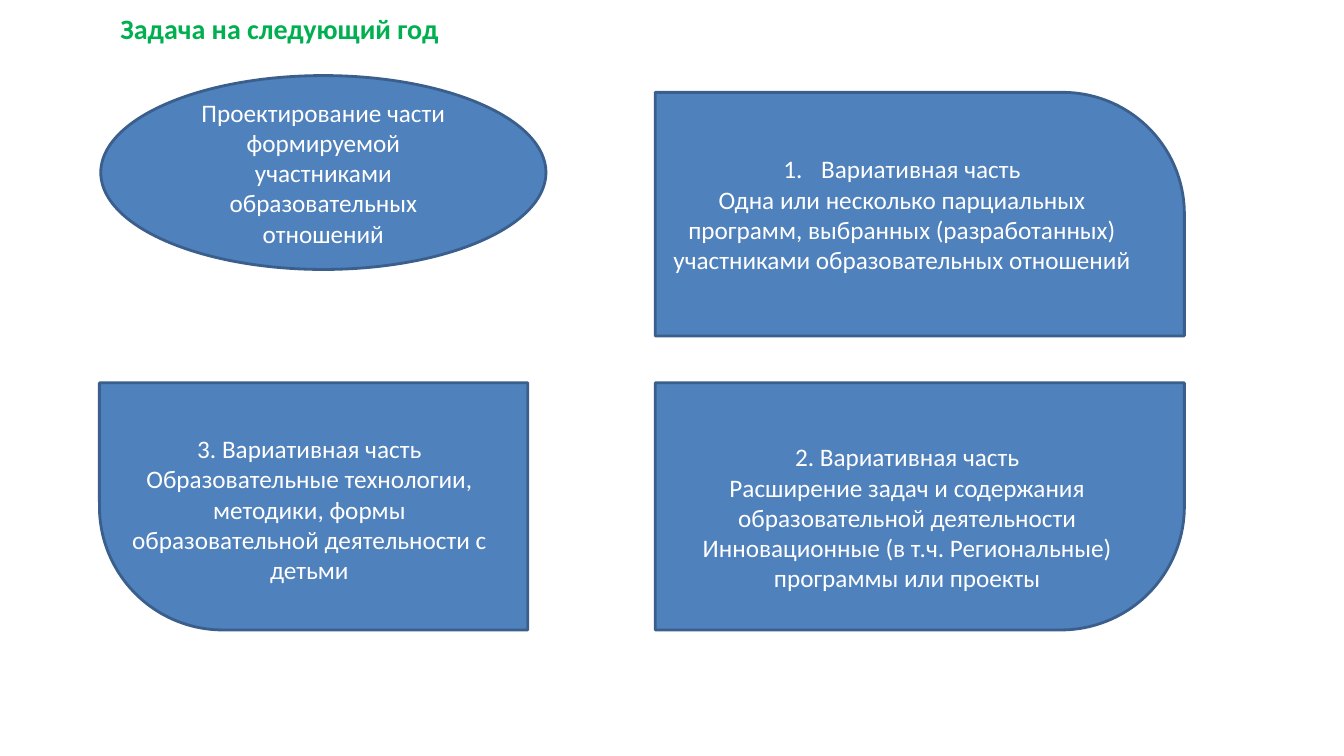
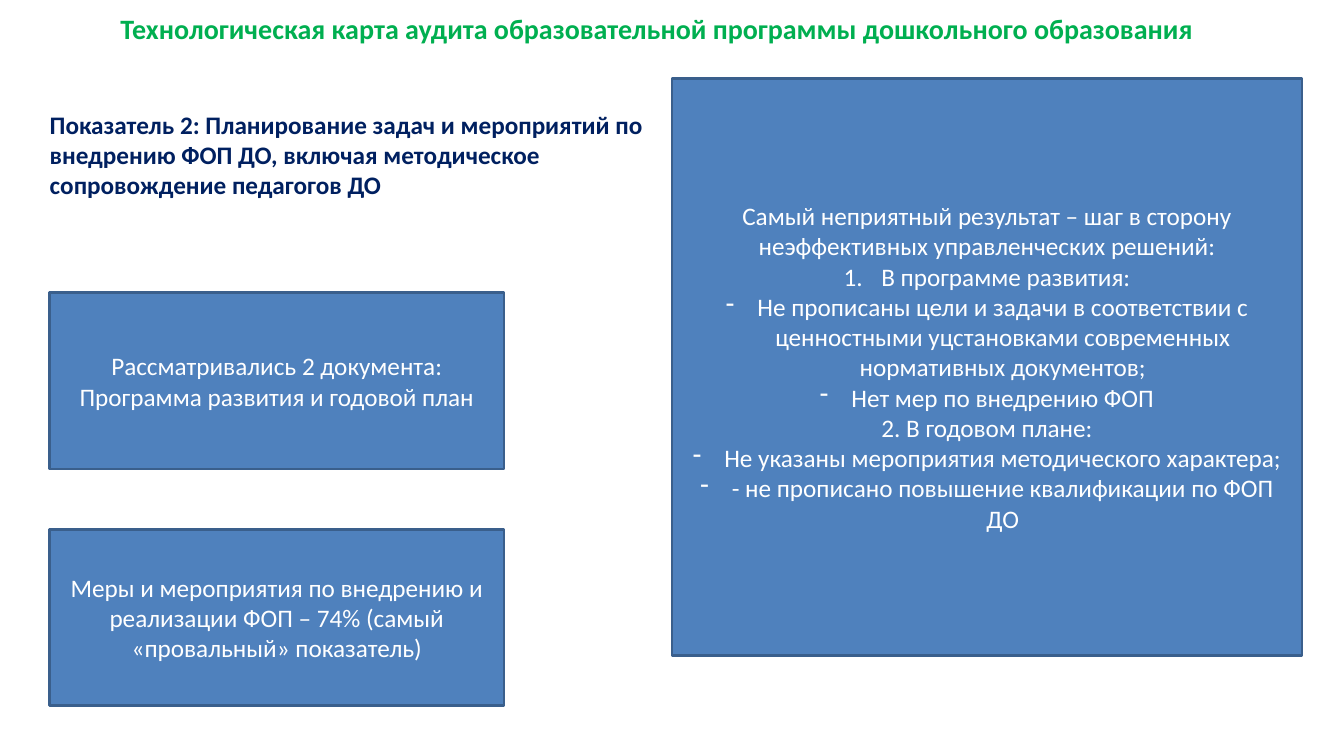
from pptx import Presentation
from pptx.dml.color import RGBColor
from pptx.enum.shapes import MSO_SHAPE as Form
from pptx.enum.text import MSO_ANCHOR as Anchor, MSO_AUTO_SIZE as Fit, PP_ALIGN as Align
from pptx.oxml.ns import qn
from pptx.util import Pt
from lxml.etree import SubElement

GREEN = RGBColor(0x00, 0xAF, 0x50)
NAVY = RGBColor(0x00, 0x20, 0x60)
BLUE = RGBColor(0x4F, 0x81, 0xBD)
EDGE = RGBColor(0x3A, 0x5F, 0x8C)
WHITE = RGBColor(0xFF, 0xFF, 0xFF)
CORNER = Form.ROUND_1_RECTANGLE
MARKS = {
    None: (0, "a:buNone", {}),
    "1.": (27, "a:buAutoNum", {"type": "arabicPeriod"}),
    "-": (22.5, "a:buChar", {"char": "-"}),
}


def write(shape, *lines, size=18, color=WHITE, bold=False,
          align=Align.CENTER, anchor=Anchor.MIDDLE, inset=(7.2, 3.6)):
    frame = shape.text_frame
    frame.word_wrap = True
    frame.auto_size = Fit.NONE
    frame.vertical_anchor = anchor
    frame.margin_left = frame.margin_right = Pt(inset[0])
    frame.margin_top = frame.margin_bottom = Pt(inset[1])
    for i, line in enumerate(lines):
        mark, text = line if isinstance(line, tuple) else (None, line)
        para = frame.add_paragraph() if i else frame.paragraphs[0]
        indent, tag, attrs = MARKS[mark]
        props = para._p.get_or_add_pPr()
        props.set("marL", str(Pt(indent)))
        props.set("indent", str(-Pt(indent)))
        SubElement(props, qn(tag), attrs)
        para.alignment = align
        para.space_before = Pt(0)
        run = para.add_run()
        run.text = text
        font = run.font
        font.name, font.size, font.bold = "Calibri", Pt(size), bold
        font.color.rgb = color


def draw(slide, form, box, *flips):
    shape = slide.shapes.add_shape(form, *map(Pt, box))
    shape.shadow.inherit = False
    shape.fill.solid()
    shape.fill.fore_color.rgb = BLUE
    shape.line.color.rgb = EDGE
    shape.line.width = Pt(2)
    if form == CORNER:
        shape.adjustments[0] = 0.5
    for flip in flips:
        shape.element.spPr.get_or_add_xfrm().set(flip, "1")
    return shape


deck = Presentation()
deck.slide_width, deck.slide_height = Pt(960), Pt(540)
plain = dict(align=Align.LEFT, anchor=Anchor.TOP, inset=(0, 0), bold=True)
slides = []
for layout, text in [
    (5, "Задача на следующий год"),
    (1, "Технологическая карта аудита образовательной программы дошкольного образования"),
]:
    slide = deck.slides.add_slide(deck.slide_layouts[layout])
    title = slide.shapes.title
    title.left, title.top, title.width, title.height = map(Pt, (86, 8, 789, 24.5))
    write(title, text, size=20, color=GREEN, **plain)
    slides.append(slide)
task, audit = slides

goal = draw(task, Form.OVAL, (72, 54, 318, 138.5))
write(goal, "Проектирование части формируемой участниками образовательных отношений")

first = draw(task, CORNER, (468, 66, 378, 174))
write(first, ("1.", "Вариативная часть"),
      "Одна или несколько парциальных программ, выбранных (разработанных) участниками образовательных отношений")

for box, flips, area, lines in [
    ((468, 273.5, 378, 176.5), ["flipV"], (468, 312, 360, 116.5), [
        "2. Вариативная часть",
        "Расширение задач и содержания образовательной деятельности",
        "Инновационные (в т.ч. Региональные) программы или проекты",
    ]),
    ((71, 273.5, 306, 176.5), ["flipH", "flipV"], (80, 306, 282, 116.5), [
        "3. Вариативная часть",
        "Образовательные технологии, методики, формы образовательной деятельности с детьми",
    ]),
]:
    draw(task, CORNER, box, *flips)
    write(task.shapes.add_textbox(*map(Pt, area)), *lines, anchor=Anchor.TOP)

body = audit.placeholders[1]
body.left, body.top, body.width, body.height = map(Pt, (35.5, 78, 468.5, 65.5))
write(body, "Показатель 2: Планирование задач и мероприятий по внедрению ФОП ДО, "
      "включая методическое сопровождение педагогов ДО", color=NAVY, **plain)

for i, text in enumerate([
    "Рассматривались 2 документа: Программа развития и годовой план",
    "Меры и мероприятия по внедрению и реализации ФОП – 74% (самый «провальный» показатель)",
]):
    write(draw(audit, Form.RECTANGLE, (35.5, 209 + 169 * i, 324.5, 126)), text)

result = draw(audit, Form.RECTANGLE, (480, 56, 450, 412))
write(
    result,
    "Самый неприятный результат – шаг в сторону неэффективных управленческих решений:",
    ("1.", "В программе развития:"),
    ("-", "Не прописаны цели и задачи в соответствии с ценностными уцстановками современных нормативных документов;"),
    ("-", "Нет мер по внедрению ФОП"),
    "2. В годовом плане:",
    ("-", "Не указаны мероприятия методического характера;"),
    ("-", "- не прописано повышение квалификации по ФОП ДО"),
)

deck.save("out.pptx")
